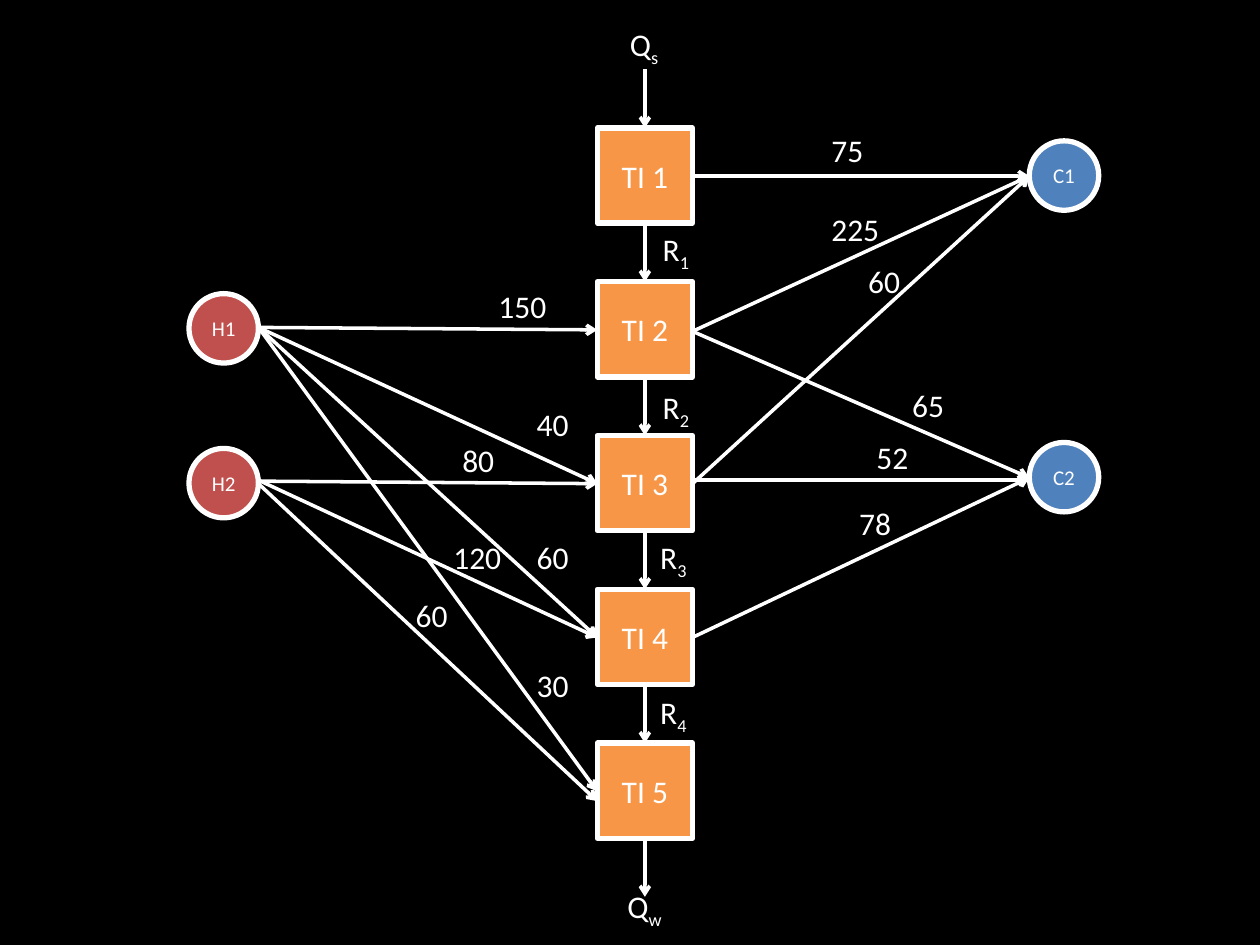
"""Build a heat cascade diagram linking hot and cold streams to temperature intervals."""
from lxml import etree
from pptx import Presentation
from pptx.dml.color import RGBColor
from pptx.enum.shapes import MSO_CONNECTOR, MSO_SHAPE
from pptx.enum.text import MSO_ANCHOR, MSO_AUTO_SIZE, PP_ALIGN
from pptx.oxml.ns import qn
from pptx.util import Cm, Pt

WHITE, BLACK = "FFFFFF", "000000"
ORANGE, RED, BLUE = "F79646", "C0504D", "4F81BD"


def paint(fill, color):
    fill.solid()
    fill.fore_color.rgb = RGBColor.from_string(color)


def style_text(paragraph, size):
    paragraph.font.name = "Calibri"
    paragraph.font.size = Pt(size)
    paint(paragraph.font.fill, WHITE)


prs = Presentation()
prs.slide_width, prs.slide_height = Cm(25.4), Cm(19.05)
slide = prs.slides.add_slide(prs.slide_layouts[6])
paint(slide.background.fill, BLACK)

interval_left, interval_top, interval_size, pitch = 12.04, 2.58, 1.92, 3.1
interval_right = interval_left + interval_size
interval_center = interval_left + interval_size / 2
gap = pitch - interval_size
stream_size, hot_left, cold_left = 1.4, 3.81, 20.75
hot_right = hot_left + stream_size

nodes = [
    (f"TI {i + 1}", MSO_SHAPE.RECTANGLE, interval_left, interval_top + pitch * i,
     interval_size, ORANGE, 18)
    for i in range(5)
]
streams = [
    ("H1", hot_left, 5.92, RED),
    ("H2", hot_left, 9.04, RED),
    ("C1", cold_left, 2.84, BLUE),
    ("C2", cold_left, 8.92, BLUE),
]
nodes += [(name, MSO_SHAPE.OVAL, left, top, stream_size, color, 12)
          for name, left, top, color in streams]

for name, outline, left, top, size, color, font_size in nodes:
    node = slide.shapes.add_shape(outline, Cm(left), Cm(top), Cm(size), Cm(size))
    node.shadow.inherit = False
    paint(node.fill, color)
    paint(node.line.fill, WHITE)
    node.line.width = Pt(3)
    frame = node.text_frame
    frame.margin_left = frame.margin_right = 0
    frame.vertical_anchor = MSO_ANCHOR.MIDDLE
    frame.text = name
    frame.paragraphs[0].alignment = PP_ALIGN.CENTER
    style_text(frame.paragraphs[0], font_size)

hot_flows = [
    ("150", 6.6, 6.65, 9.8, 5.66),
    ("40", 6.6, 9.75, 10.57, 8.05),
    ("60", 6.6, 12.85, 10.57, 10.72),
    ("30", 6.6, 15.95, 10.57, 13.31),
    ("80", 9.7, 9.75, 9.07, 8.76),
    ("120", 9.68, 12.85, 8.89, 10.72),
    ("60", 9.75, 16.15, 8.13, 11.89),
]
cold_flows = [
    ("75", 3.55, 3.55, 16.51, 2.51),
    ("225", 6.68, 3.55, 16.51, 4.11),
    ("60", 9.75, 3.55, 17.25, 5.16),
    ("65", 6.68, 9.63, 18.14, 7.65),
    ("52", 9.68, 9.68, 17.42, 8.71),
    ("78", 12.85, 9.63, 17.07, 10.03),
]
arrows = [(hot_right, start, interval_left, end) for _, start, end, _, _ in hot_flows]
arrows += [(interval_right, start, cold_left, end) for _, start, end, _, _ in cold_flows]
arrows += [(interval_center, interval_top - gap + pitch * i,
            interval_center, interval_top + pitch * i) for i in range(6)]

for ends in arrows:
    arrow = slide.shapes.add_connector(MSO_CONNECTOR.STRAIGHT, *map(Cm, ends))
    paint(arrow.line.fill, WHITE)
    arrow.line.width = Pt(2)
    etree.SubElement(arrow.line._get_or_add_ln(), qn("a:tailEnd"), type="arrow")
    etree.SubElement(arrow._element.spPr, qn("a:effectLst"))

labels = [(value, "", left, top, 1.17 if len(value) == 2 else 1.5)
          for value, _, _, left, top in hot_flows + cold_flows]
labels += [
    ("R", "1", 13.11, 4.52, 1.09),
    ("R", "2", 13.11, 7.7, 1.09),
    ("R", "3", 13.06, 10.72, 1.09),
    ("R", "4", 13.06, 13.84, 1.09),
    ("Q", "s", 12.45, 0.38, 1.12),
    ("Q", "w", 12.4, 17.75, 1.24),
]

for symbol, subscript, left, top, width in labels:
    label = slide.shapes.add_textbox(Cm(left), Cm(top), Cm(width), Cm(1.03))
    frame = label.text_frame
    frame.word_wrap = False
    frame.auto_size = MSO_AUTO_SIZE.SHAPE_TO_FIT_TEXT
    paragraph = frame.paragraphs[0]
    paragraph.add_run().text = symbol
    if subscript:
        index = paragraph.add_run()
        index.text = subscript
        index._r.get_or_add_rPr().set("baseline", "-25000")
    style_text(paragraph, 18)

prs.save("out.pptx")
